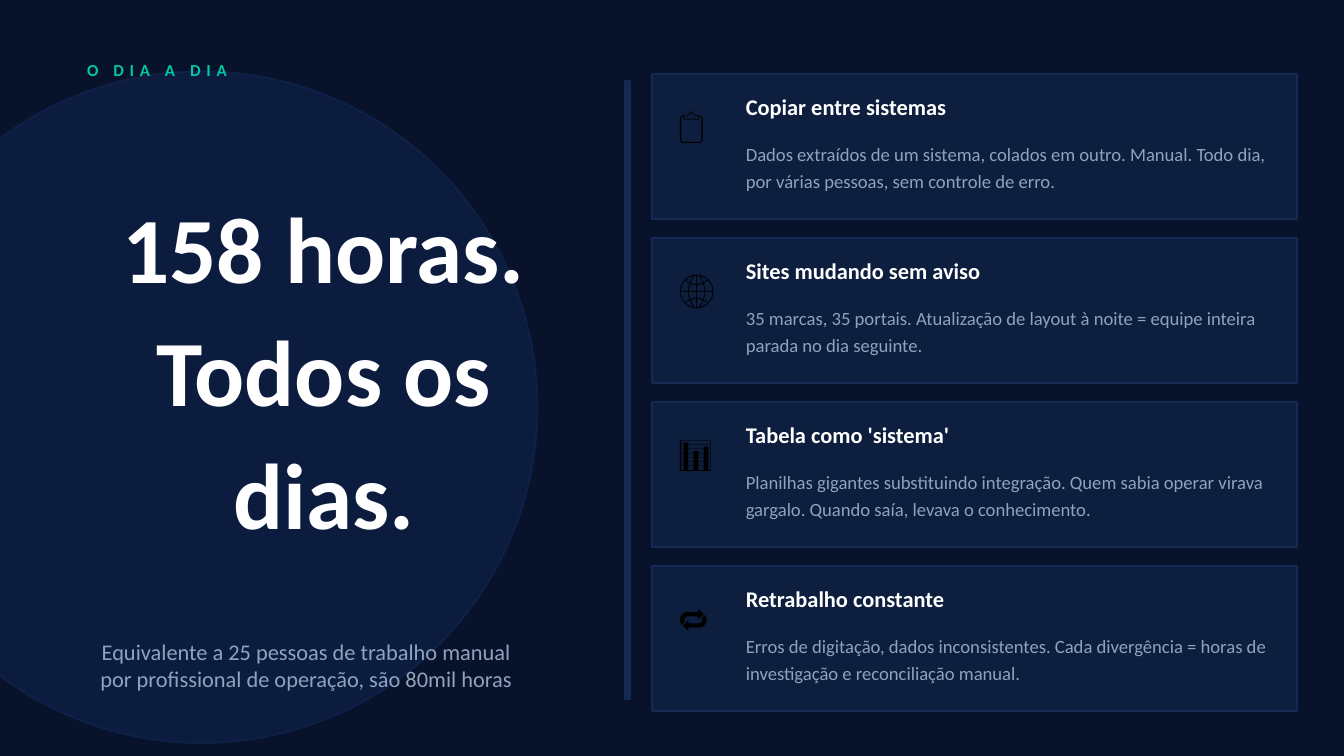
"""Build the slide on the daily cost of manual work."""
from lxml import etree
from pptx import Presentation
from pptx import util as u
from pptx.dml.color import RGBColor
from pptx.enum import shapes, text
from pptx.oxml import ns

NIGHT = RGBColor(0x08, 0x12, 0x2A)
BLUE = RGBColor(0x1A, 0x3A, 0x7A)
EDGE = RGBColor(0x15, 0x2A, 0x52)
CARD = RGBColor(0x0D, 0x1E, 0x3E)
GREEN = RGBColor(0x00, 0xC8, 0xA0)
WHITE = RGBColor(0xFF, 0xFF, 0xFF)
GREY = RGBColor(0x8F, 0xA3, 0xBF)
BLACK = RGBColor(0, 0, 0)

deck = Presentation()
deck.slide_width = u.Inches(10)
deck.slide_height = deck.slide_width * 9 // 16
UNIT = deck.slide_width / 100
slide = deck.slides.add_slide(deck.slide_layouts[6])
slide.background.fill.solid()
slide.background.fill.fore_color.rgb = NIGHT


def draw(kind, area, fill, edge):
    """Add a filled, outlined shape; area is in hundredths of the width."""
    shape = slide.shapes.add_shape(kind, *(round(n * UNIT) for n in area))
    shape.shadow.inherit = False
    shape.fill.solid()
    shape.fill.fore_color.rgb = fill
    shape.line.color.rgb = edge
    shape.line.width = u.Pt(1)
    return shape


def write(area, lines, size, color, bold=False, align=None, space=None, inset=0):
    """Add a text box with one paragraph per line and return its runs."""
    frame = slide.shapes.add_textbox(*(round(n * UNIT) for n in area)).text_frame
    frame.word_wrap = True
    frame.vertical_anchor = text.MSO_ANCHOR.MIDDLE
    frame.margin_left = frame.margin_right = round(inset * UNIT)
    frame.margin_top = frame.margin_bottom = round(inset * UNIT / 2)
    runs = []
    for i, line in enumerate(lines):
        para = frame.add_paragraph() if i else frame.paragraphs[0]
        para.alignment = align
        para.line_spacing = space
        run = para.add_run()
        run.text = line
        run.font.name = "Calibri"
        run.font.size = u.Pt(size)
        run.font.bold = bold
        run.font.color.rgb = color
        runs.append(run)
    return runs


RECT = shapes.MSO_SHAPE.RECTANGLE
MID = text.PP_ALIGN.CENTER

disc = draw(shapes.MSO_SHAPE.OVAL, (-10, 5.3, 50, 50), BLUE, BLUE)
for tint in disc._element.xpath("./p:spPr//a:srgbClr"):
    etree.SubElement(tint, ns.qn("a:alpha"), val="25000")

label = write((5.5, 3.8, 40, 2.8), ["O DIA A DIA"], 9, GREEN, True, inset=1)
label[0].font._element.set("spc", "300")
write((5.1, 13.05, 38, 28), ["158 horas.", "Todos os dias."], 50, WHITE, True, MID, 1.1)
write((3.8, 46.4, 38, 6.2),
      ["Equivalente a 25 pessoas de trabalho manual",
       "por profissional de operação, são 80mil horas"], 12, GREY, align=MID)
draw(RECT, (46.5, 6, 0.4, 46), EDGE, EDGE)

CARDS = [
    ("📋", "Copiar entre sistemas",
     "Dados extraídos de um sistema, colados em outro. Manual. Todo dia, "
     "por várias pessoas, sem controle de erro."),
    ("🌐", "Sites mudando sem aviso",
     "35 marcas, 35 portais. Atualização de layout à noite = equipe inteira "
     "parada no dia seguinte."),
    ("📊", "Tabela como 'sistema'",
     "Planilhas gigantes substituindo integração. Quem sabia operar virava "
     "gargalo. Quando saía, levava o conhecimento."),
    ("🔁", "Retrabalho constante",
     "Erros de digitação, dados inconsistentes. Cada divergência = horas de "
     "investigação e reconciliação manual."),
]
LEFT, TOP, STEP = 48.5, 5.5, 12.2
for row, (icon, title, body) in enumerate(CARDS):
    y = TOP + row * STEP
    draw(RECT, (LEFT, y, 48, 10.8), CARD, EDGE)
    write((LEFT + 1, y + 1, 5.5, 5.5), [icon], 18, BLACK, inset=1)
    write((LEFT + 7, y + 0.8, 40, 3.2), [title], 12, WHITE, True)
    write((LEFT + 7, y + 4.2, 40, 5.2), [body], 10, GREY, space=1.2)

deck.save("out.pptx")
